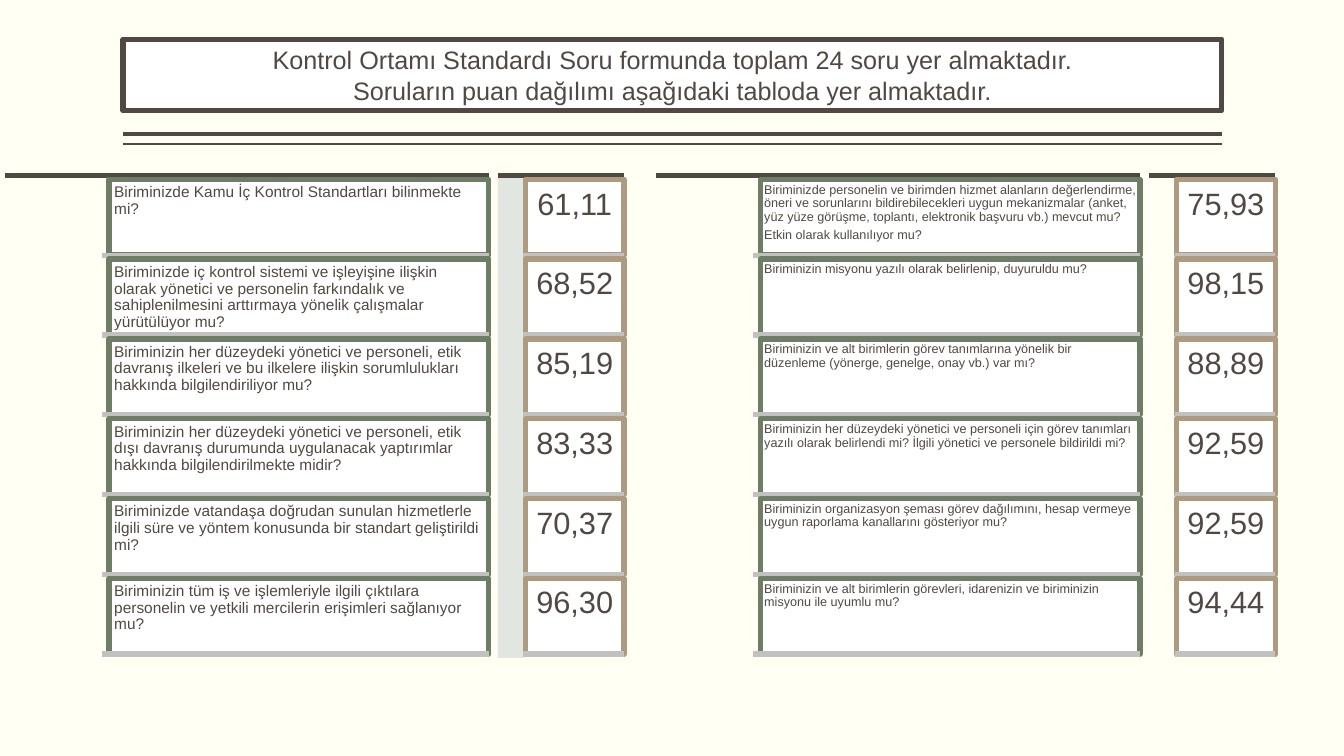
from dataclasses import dataclass

from lxml import etree
from pptx import Presentation
from pptx.dml.color import RGBColor
from pptx.enum.shapes import MSO_CONNECTOR, MSO_SHAPE
from pptx.enum.text import MSO_ANCHOR, MSO_AUTO_SIZE, PP_ALIGN
from pptx.oxml.ns import qn
from pptx.util import Cm, Pt

RECTANGLE = MSO_SHAPE.RECTANGLE
STRAIGHT = MSO_CONNECTOR.STRAIGHT
TOP, MIDDLE = MSO_ANCHOR.TOP, MSO_ANCHOR.MIDDLE
LEFT, CENTER = PP_ALIGN.LEFT, PP_ALIGN.CENTER
TITLE_ONLY = 5


@dataclass(frozen=True)
class Theme:
    font: str = "Arial"
    paper: str = "FFFFF3"
    card: str = "FFFFFF"
    ink: str = "514843"
    question: str = "6D7D66"
    score: str = "AE9A7E"
    divider: str = "C2C1C0"
    band: str = "E2E6E0"
    title_size: float = 18
    score_size: float = 22
    large_question_size: float = 11
    small_question_size: float = 9
    border: float = 3.78
    thick_rule: float = 3
    thin_rule: float = 1


@dataclass(frozen=True)
class ColumnStyle:
    """Indents, padding and text style of a column; lengths in cm."""
    card_indent: float
    divider_indent: float
    padding: float
    size: float
    align: PP_ALIGN
    border: str


THEME = Theme()
LARGE_QUESTIONS = ColumnStyle(2.62, 2.44, 0.13, THEME.large_question_size, LEFT, THEME.question)
SMALL_QUESTIONS = ColumnStyle(2.62, 2.44, 0.1, THEME.small_question_size, LEFT, THEME.question)
SCORES = ColumnStyle(0.69, 0.64, 0.23, THEME.score_size, CENTER, THEME.score)

ROW_PITCH = 2.01
CARD_HEIGHT = 1.91
CARD_DROP = 0.1
COLUMN_TOP = 4.42
QUESTION_WIDTH = 12.19
SCORE_WIDTH = 3.18
SCORE_OFFSET = 12.42

TITLE = """Kontrol Ortamı Standardı Soru formunda toplam 24 soru yer almaktadır.
Soruların puan dağılımı aşağıdaki tabloda yer almaktadır."""

FIRST_HALF = [
    ("Biriminizde Kamu İç Kontrol Standartları bilinmekte mi?", "61,11"),
    ("Biriminizde iç kontrol sistemi ve işleyişine ilişkin olarak yönetici ve personelin "
     "farkındalık ve sahiplenilmesini arttırmaya yönelik çalışmalar yürütülüyor mu?", "68,52"),
    ("Biriminizin her düzeydeki yönetici ve personeli, etik davranış ilkeleri ve bu ilkelere "
     "ilişkin sorumlulukları hakkında bilgilendiriliyor mu?", "85,19"),
    ("Biriminizin her düzeydeki yönetici ve personeli, etik dışı davranış durumunda "
     "uygulanacak yaptırımlar hakkında bilgilendirilmekte midir?", "83,33"),
    ("Biriminizde vatandaşa doğrudan sunulan hizmetlerle ilgili süre ve yöntem konusunda "
     "bir standart geliştirildi mi?", "70,37"),
    ("Biriminizin tüm iş ve işlemleriyle ilgili çıktılara personelin ve yetkili mercilerin "
     "erişimleri sağlanıyor mu?", "96,30"),
]
SECOND_HALF = [
    ("Biriminizde personelin ve birimden hizmet alanların değerlendirme, öneri ve sorunlarını "
     "bildirebilecekleri uygun mekanizmalar (anket, yüz yüze görüşme, toplantı, elektronik "
     "başvuru vb.) mevcut mu?\nEtkin olarak kullanılıyor mu?", "75,93"),
    ("Biriminizin misyonu yazılı olarak belirlenip, duyuruldu mu?", "98,15"),
    ("Biriminizin ve alt birimlerin görev tanımlarına yönelik bir düzenleme (yönerge, genelge, "
     "onay vb.) var mı?", "88,89"),
    ("Biriminizin her düzeydeki yönetici ve personeli için görev tanımları yazılı olarak "
     "belirlendi mi? İlgili yönetici ve personele bildirildi mi?", "92,59"),
    ("Biriminizin organizasyon şeması görev dağılımını, hesap vermeye uygun raporlama "
     "kanallarını gösteriyor mu?", "92,59"),
    ("Biriminizin ve alt birimlerin görevleri, idarenizin ve biriminizin misyonu ile uyumlu mu?",
     "94,44"),
]


def color(code):
    return RGBColor.from_string(code)


def add_rule(slide, left, top, width, ink, weight):
    rule = slide.shapes.add_connector(STRAIGHT, Cm(left), Cm(top), Cm(left + width), Cm(top))
    rule.line.color.rgb = color(ink)
    rule.line.width = Pt(weight)
    etree.SubElement(rule._element.spPr, qn("a:effectLst"))


def paint(shape, fill, border=None):
    shape.fill.solid()
    shape.fill.fore_color.rgb = color(fill)
    if border is None:
        shape.line.fill.background()
    else:
        shape.line.color.rgb = color(border)
        shape.line.width = Pt(THEME.border)


def write(shape, text, size, align, anchor, padding, spacing=1.0, after=0.0):
    """Fill a shape with text; after is a share of the type size."""
    frame = shape.text_frame
    frame.text = text
    frame.word_wrap = True
    frame.auto_size = MSO_AUTO_SIZE.NONE
    frame.vertical_anchor = anchor
    frame.margin_left = frame.margin_right = Cm(padding)
    frame.margin_top = frame.margin_bottom = Cm(padding)
    for paragraph in frame.paragraphs:
        paragraph.alignment = align
        paragraph.line_spacing = spacing
        paragraph.space_before = Pt(0)
        paragraph.space_after = Pt(size * after)
        paragraph.font.name = THEME.font
        paragraph.font.size = Pt(size)
        paragraph.font.color.rgb = color(THEME.ink)


def add_rectangle(slide, left, top, width, height, fill, border=None):
    rectangle = slide.shapes.add_shape(RECTANGLE, Cm(left), Cm(top), Cm(width), Cm(height))
    rectangle.shadow.inherit = False
    paint(rectangle, fill, border)
    return rectangle


def add_header(slide, left, top, width, height):
    title = slide.shapes.title
    title.left, title.top, title.width, title.height = Cm(left), Cm(top), Cm(width), Cm(height)
    paint(title, THEME.card, THEME.ink)
    write(title, TITLE, THEME.title_size, CENTER, MIDDLE, 0.13)
    add_rule(slide, left, top + height + 0.59, width, THEME.ink, THEME.thick_rule)
    add_rule(slide, left, top + height + 0.84, width, THEME.ink, THEME.thin_rule)


def add_column(slide, left, top, width, entries, style):
    add_rule(slide, left, top, width, THEME.ink, THEME.border)
    for row, entry in enumerate(entries):
        card_top = top + CARD_DROP + row * ROW_PITCH
        card = add_rectangle(slide, left + style.card_indent, card_top,
                             width - style.card_indent, CARD_HEIGHT, THEME.card, style.border)
        write(card, entry, style.size, style.align, TOP, style.padding, spacing=0.9, after=0.35)
        add_rule(slide, left + style.divider_indent, card_top + CARD_HEIGHT,
                 width - style.divider_indent, THEME.divider, THEME.border)


def add_half(slide, left, top, scored_questions, question_style, banded=False):
    """Place a column of questions with its column of scores to the right."""
    questions, scores = zip(*scored_questions)
    add_column(slide, left, top, QUESTION_WIDTH, questions, question_style)
    score_left = left + SCORE_OFFSET
    if banded:
        add_rectangle(slide, score_left, top, SCORES.divider_indent,
                      len(scores) * ROW_PITCH + CARD_DROP, THEME.band)
    add_column(slide, score_left, top, SCORE_WIDTH, scores, SCORES)


def main():
    deck = Presentation()
    deck.slide_width, deck.slide_height = Cm(33.87), Cm(19.05)
    slide = deck.slides.add_slide(deck.slide_layouts[TITLE_ONLY])
    slide.background.fill.solid()
    slide.background.fill.fore_color.rgb = color(THEME.paper)
    add_header(slide, 3.1, 0.99, 27.69, 1.8)
    add_half(slide, 0.13, COLUMN_TOP, FIRST_HALF, LARGE_QUESTIONS, banded=True)
    add_half(slide, 16.54, COLUMN_TOP, SECOND_HALF, SMALL_QUESTIONS)
    deck.save("out.pptx")


if __name__ == "__main__":
    main()
